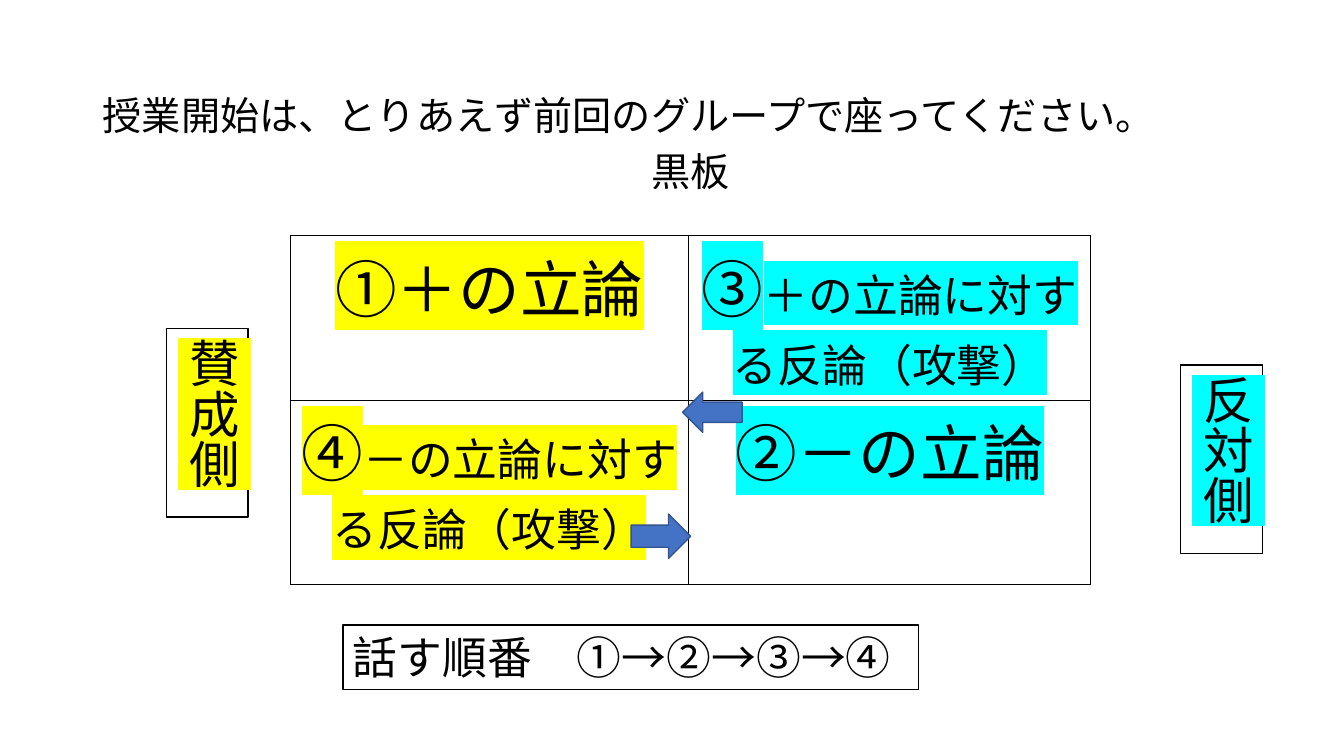
from lxml import etree
from pptx import Presentation
from pptx.dml.color import RGBColor
from pptx.enum.shapes import MSO_SHAPE
from pptx.enum.text import MSO_ANCHOR, MSO_AUTO_SIZE, PP_ALIGN
from pptx.oxml.ns import qn
from pptx.util import Inches, Pt

RECT = MSO_SHAPE.RECTANGLE
LEFT_ARROW, RIGHT_ARROW = MSO_SHAPE.LEFT_ARROW, MSO_SHAPE.RIGHT_ARROW
TOP, MIDDLE = MSO_ANCHOR.TOP, MSO_ANCHOR.MIDDLE
GROW, FIXED = MSO_AUTO_SIZE.SHAPE_TO_FIT_TEXT, MSO_AUTO_SIZE.NONE
LEFT, CENTER = PP_ALIGN.LEFT, PP_ALIGN.CENTER

FONT = "Noto Sans CJK JP"
COLORS = {"ink": "000000", "paper": "FFFFFF", "pro": "FFFF00",
          "con": "00FFFF", "arrow": "4472C4", "edge": "325491"}
COLS, ROWS = (3.95, 3.99), (1.25, 1.83)
SEATS = [  # rows of cells: side and its runs of text and size
    [("pro", [("①＋の立論", 44)]),
     ("con", [("③", 44), ("＋の立論に対する反論（攻撃）", 32)])],
    [("pro", [("④", 44), ("－の立論に対する反論（攻撃）", 32)]),
     ("con", [("②－の立論", 44)])],
]


def color(name):
    return RGBColor.from_string(COLORS[name])


def add_run(para, text, size, mark=None):
    run = para.add_run()
    run.text = text
    font = run.font
    font.size, font.name = Pt(size), FONT
    font.color.rgb = color("ink")
    props = run._r.get_or_add_rPr()
    east = etree.SubElement(props, qn("a:ea"))
    east.set("typeface", FONT)
    if mark:
        light = etree.Element(qn("a:highlight"))
        etree.SubElement(light, qn("a:srgbClr")).set("val", COLORS[mark])
        props.find(qn("a:solidFill")).addnext(light)


def add_form(slide, kind, box, fill, line):
    form = slide.shapes.add_shape(kind, *map(Inches, box))
    form.shadow.inherit = False
    form.fill.solid()
    form.fill.fore_color.rgb = color(fill)
    form.line.color.rgb = color(line)
    form.line.width = Pt(1)
    return form


def add_label(slide, box, text, size, mark=None, upright=False):
    form = add_form(slide, RECT, box, "paper", "ink")
    frame = form.text_frame
    frame.word_wrap = True
    frame.auto_size = GROW
    frame.vertical_anchor = TOP
    if upright:
        frame._txBody.bodyPr.set("vert", "eaVert")
    para = frame.paragraphs[0]
    para.alignment = LEFT
    add_run(para, text, size, mark)


def add_intro(slide, box):
    slide.shapes.title.element.getparent().remove(slide.shapes.title.element)
    body = slide.placeholders[1]
    body.left, body.top, body.width, body.height = map(Inches, box)
    frame = body.text_frame
    frame.auto_size = FIXED
    frame.vertical_anchor = TOP
    lines = [("授業開始は、とりあえず前回のグループで座ってください。", 0),
             ("黒板", 14 * 28)]
    for i, (text, indent) in enumerate(lines):
        para = frame.add_paragraph() if i else frame.paragraphs[0]
        para.line_spacing, para.space_before = 0.9, Pt(10)
        para.alignment = LEFT
        props = para._p.get_or_add_pPr()
        props.set("marL", str(Pt(indent)))
        props.set("indent", "0")
        etree.SubElement(props, qn("a:buNone"))
        add_run(para, text, 28)


def set_border(cell):
    props = cell._tc.get_or_add_tcPr()
    for i, side in enumerate(("lnL", "lnR", "lnT", "lnB")):
        line = etree.Element(qn("a:" + side), w=str(Pt(1)))
        fill = etree.SubElement(line, qn("a:solidFill"))
        etree.SubElement(fill, qn("a:srgbClr")).set("val", COLORS["ink"])
        props.insert(i, line)


def add_seats(slide, left, top):
    frame = slide.shapes.add_table(len(ROWS), len(COLS), Inches(left), Inches(top),
                                   Inches(sum(COLS)), Inches(sum(ROWS)))
    table = frame.table
    table.first_row = table.horz_banding = False
    for col, width in zip(table.columns, COLS):
        col.width = Inches(width)
    for row, height, seats in zip(table.rows, ROWS, SEATS):
        row.height = Inches(height)
        for cell, (side, runs) in zip(row.cells, seats):
            cell.fill.background()
            set_border(cell)
            para = cell.text_frame.paragraphs[0]
            para.alignment = CENTER
            for text, size in runs:
                add_run(para, text, size, side)


def main():
    deck = Presentation()
    deck.slide_width, deck.slide_height = Inches(13.33), Inches(7.5)
    slide = deck.slides.add_slide(deck.slide_layouts[1])
    add_intro(slide, (0.92, 0.91, 11.5, 5.85))
    add_seats(slide, 2.88, 2.34)
    add_label(slide, (1.65, 3.26, 0.81, 1.87), "賛成側", 36, "pro", True)
    add_label(slide, (11.71, 3.62, 0.81, 1.87), "反対側", 36, "con", True)
    add_label(slide, (3.4, 6.2, 5.71, 0.64), "話す順番　①→②→③→④", 32)
    add_form(slide, LEFT_ARROW, (6.77, 3.89, 0.59, 0.4), "arrow", "edge")
    add_form(slide, RIGHT_ARROW, (6.26, 5.1, 0.59, 0.44), "arrow", "edge")
    deck.save("out.pptx")


if __name__ == "__main__":
    main()
